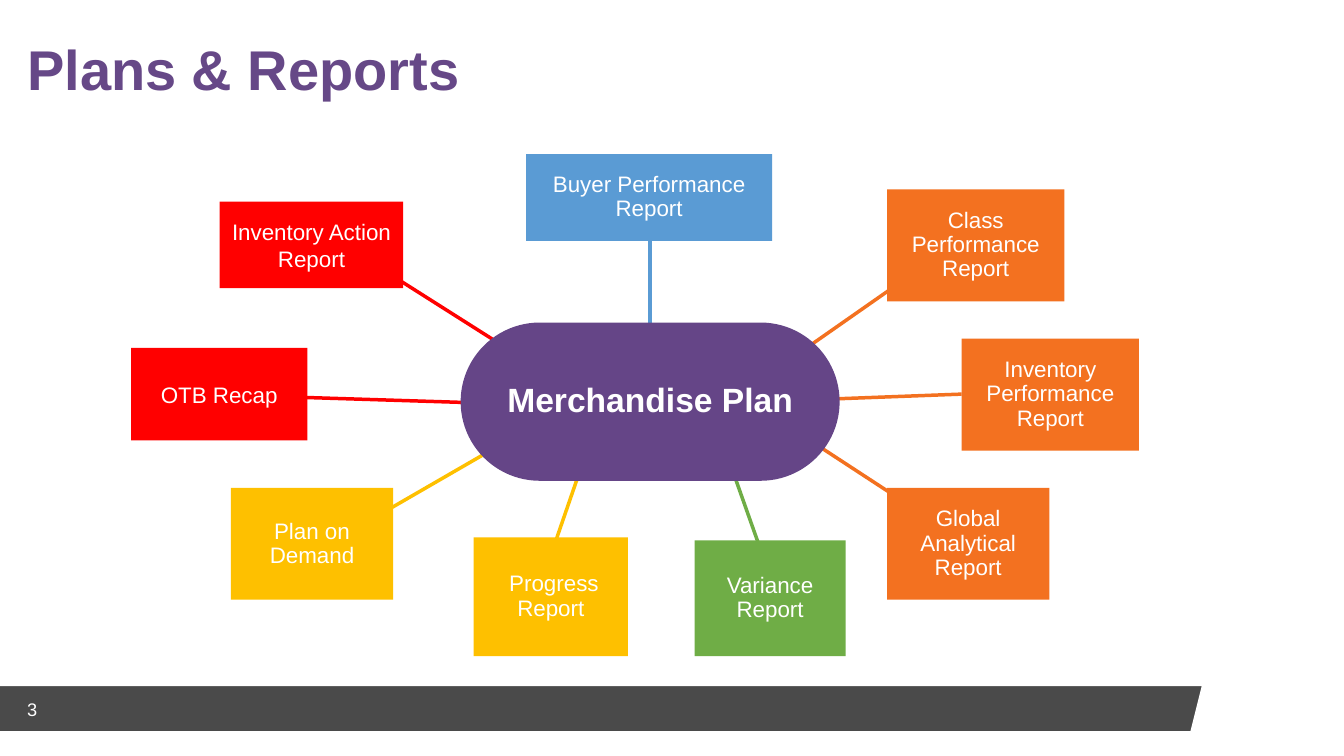
from collections import namedtuple

from lxml import etree
from pptx import Presentation, util as u
from pptx.dml.color import RGBColor
from pptx.enum import shapes, text
from pptx.oxml.ns import qn

# Grid: 133.3 columns by 75 rows, each a tenth of an inch
CELL = u.Inches(0.1)
COLUMNS, ROWS = 133.33, 75

FONT = "Arial"
WHITE, PURPLE, HUB_PURPLE = "FFFFFF", "664887", "654587"
ORANGE, GREEN, YELLOW, BLUE, RED = "F37120", "6FAD46", "FEC000", "5A9BD4", "FF0000"

# box: left, top, width, height; spoke: start x, y, end x, y
Report = namedtuple("Report", "name colour box spoke spacing", defaults=[0.9])
REPORTS = [
    Report("Class Performance Report", ORANGE, (88, 18.8, 17.6, 11.1), (90.2, 27.4, 79.9, 34.6)),
    Report("Inventory Performance Report", ORANGE, (95.4, 33.6, 17.6, 11.1), (95.4, 39.1, 82.1, 39.6)),
    Report("Global Analytical Report", ORANGE, (88, 48.4, 16.1, 11.1), (89.4, 49.6, 79.6, 43.2)),
    Report("Variance Report", GREEN, (68.9, 53.6, 15, 11.5), (75.8, 55.5, 73, 47.6)),
    Report(" Progress Report", YELLOW, (47, 53.3, 15.3, 11.8), (54.5, 55.5, 57.5, 46.8)),
    Report("Plan on Demand", YELLOW, (22.9, 48.4, 16.1, 11.1), (35.5, 52.3, 49, 44.5)),
    Report("Buyer Performance Report", BLUE, (52.2, 15.3, 24.4, 8.6), (64.5, 21.2, 64.5, 34.5)),
    Report("Inventory Action Report", RED, (21.8, 20, 18.2, 8.6), (37.1, 26.2, 50.2, 34.5), 1),
    Report("OTB Recap", RED, (13, 34.5, 17.5, 9.2), (29.2, 39.4, 48.4, 40), 1),
]


def cells(*counts):
    return [round(count * CELL) for count in counts]


def paint(colour_format, colour):
    colour_format.rgb = RGBColor.from_string(colour)


def write(shape, words, size, colour, margins, align, anchor, bold=False, spacing=1):
    frame = shape.text_frame
    frame.word_wrap = True
    frame.vertical_anchor = anchor
    (frame.margin_left, frame.margin_top,
     frame.margin_right, frame.margin_bottom) = cells(*margins)
    frame.text = words
    paragraph = frame.paragraphs[0]
    paragraph.alignment = align
    paragraph.line_spacing = spacing
    font = paragraph.font
    font.name, font.size, font.bold = FONT, u.Pt(size), bold
    paint(font.color, colour)


def add_block(slide, kind, box, fill):
    block = slide.shapes.add_shape(kind, *cells(*box))
    block.shadow.inherit = False
    block.fill.solid()
    paint(block.fill.fore_color, fill)
    block.line.fill.background()
    return block


def add_label(block, words, size, bold=False, spacing=0.9):
    write(block, words, size, WHITE, (1, 1, 1, 1), text.PP_ALIGN.CENTER,
          text.MSO_ANCHOR.MIDDLE, bold, spacing)


def add_spoke(slide, ends, colour):
    spoke = slide.shapes.add_connector(shapes.MSO_CONNECTOR.STRAIGHT, *cells(*ends))
    spoke.line.width = u.Pt(2.5)
    paint(spoke.line.color, colour)
    etree.SubElement(spoke._element.spPr, qn("a:effectLst"))


def add_title(slide, words):
    title = slide.shapes.title
    title.left, title.top, title.width, title.height = cells(2.7, 4.2, 77, 7.1)
    write(title, words, 40, PURPLE, (0, 0, 0, 1), text.PP_ALIGN.LEFT,
          text.MSO_ANCHOR.TOP, bold=True, spacing=0.9)
    title.text_frame.auto_size = text.MSO_AUTO_SIZE.SHAPE_TO_FIT_TEXT


def add_footer(slide, number):
    band = add_block(slide, shapes.MSO_SHAPE.PARALLELOGRAM, (-2.1, 68, 121.4, 4.6), "000000")
    band.adjustments[0] = 0.25
    paint(band.line.color, WHITE)
    band.line.width = u.Pt(1)
    # Let the white background through
    black = band._element.spPr.find(qn("a:solidFill"))[0]
    etree.SubElement(black, qn("a:alpha"), val="71000")

    page = slide.shapes.add_textbox(*cells(2.7, 68.5, 5.5, 3.7))
    write(page, number, 13, WHITE, (0, 0, 0, 0), text.PP_ALIGN.LEFT, text.MSO_ANCHOR.MIDDLE)


def main():
    deck = Presentation()
    deck.slide_width, deck.slide_height = cells(COLUMNS, ROWS)
    slide = deck.slides.add_slide(deck.slide_layouts.get_by_name("Title Only"))

    # Title and footer
    add_title(slide, "Plans & Reports")
    add_footer(slide, "3")

    # Spokes lie behind the boxes
    for report in REPORTS:
        add_spoke(slide, report.spoke, report.colour)

    # Reports around the hub
    for report in REPORTS:
        block = add_block(slide, shapes.MSO_SHAPE.RECTANGLE, report.box, report.colour)
        add_label(block, report.name, 16, spacing=report.spacing)

    # Hub
    hub = add_block(slide, shapes.MSO_SHAPE.ROUNDED_RECTANGLE, (45.7, 32, 37.6, 15.7), HUB_PURPLE)
    hub.adjustments[0] = 0.5
    add_label(hub, "Merchandise Plan", 24, bold=True)

    deck.save("out.pptx")


if __name__ == "__main__":
    main()
